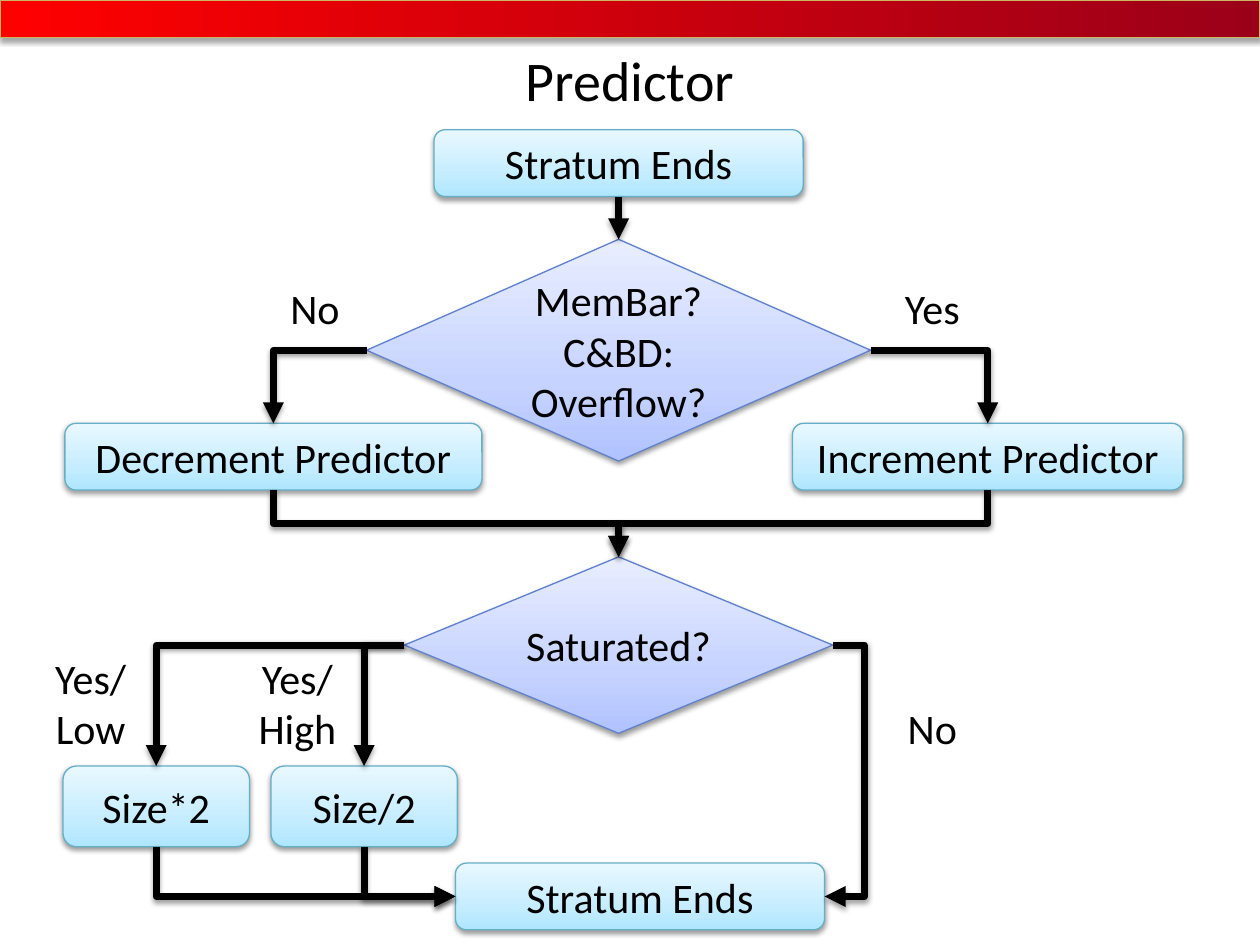
from copy import deepcopy

from lxml.etree import SubElement as Sub
from pptx import Presentation
from pptx.dml.color import RGBColor
from pptx.enum.shapes import MSO_CONNECTOR as Link, MSO_SHAPE as Kind
from pptx.enum.text import MSO_ANCHOR as Anchor, PP_ALIGN as Align
from pptx.oxml.ns import qn
from pptx.util import Inches, Pt

BLACK = RGBColor(0, 0, 0)
RED = RGBColor(0xFF, 0x00, 0x00)
WINE = RGBColor(0x9B, 0x00, 0x19)
GOLD = RGBColor(0xCC, 0xB6, 0x61)
AQUA = [RGBColor(0xAE, 0xE6, 0xFF), RGBColor(0xC6, 0xED, 0xFF), RGBColor(0xE9, 0xF8, 0xFF)]
TEAL = RGBColor(0x66, 0xAE, 0xC7)
LILAC = [RGBColor(0xB0, 0xC2, 0xFF), RGBColor(0xC6, 0xD3, 0xFF), RGBColor(0xE9, 0xEE, 0xFF)]
BLUE = RGBColor(0x60, 0x81, 0xCD)
WIDE, HIGH = Inches(10), Inches(7.5)
COLS, ROWS = 100, 75
TOP, LEFT, BASE, RIGHT = range(4)
STEP = Kind.FLOWCHART_ALTERNATE_PROCESS
TEST = Kind.FLOWCHART_DECISION
AXIS = 49.1


def cell(left, top, wide, high):
    col, row = WIDE / COLS, HIGH / ROWS
    return round(left * col), round(top * row), round(wide * col), round(high * row)


def write(frame, text, size=24):
    frame.word_wrap = True
    frame.text = text
    for para in frame.paragraphs:
        para.alignment = Align.CENTER
        for run in para.runs:
            run.font.size = Pt(size)
            run.font.name = "Calibri"
            run.font.color.rgb = BLACK


def shade(item, alpha=38, gap=1.6):
    props = item._element.spPr
    for old in props.findall(qn("a:effectLst")):
        props.remove(old)
    drop = Sub(Sub(props, qn("a:effectLst")), qn("a:outerShdw"), blurRad=str(Pt(3.1)),
               dist=str(Pt(gap)), dir="5400000", rotWithShape="0")
    tone = Sub(drop, qn("a:srgbClr"), val=str(BLACK))
    Sub(tone, qn("a:alpha"), val=str(alpha * 1000))


def blend(shape, tones, angle, edge):
    shape.fill.gradient()
    shape.fill.gradient_angle = angle
    if len(tones) == 3:
        first = shape.fill.gradient_stops[0]._gs
        first.addnext(deepcopy(first))
    spots = [0, 0.35, 1] if len(tones) == 3 else [0, 1]
    for stop, tone, spot in zip(shape.fill.gradient_stops, tones, spots):
        stop.color.rgb = tone
        stop.position = spot
    shape.line.color.rgb = edge
    shape.line.width = Pt(0.75)


def add_bar(shapes):
    bar = shapes.add_shape(Kind.RECTANGLE, *cell(0, 0, COLS, 3))
    blend(bar, [RED, WINE], 0, GOLD)
    shade(bar, 35, 1.8)


def add_title(slide, text):
    title = slide.shapes.title
    title.left, title.top, title.width, title.height = cell(5, 3, 90, 6.6)
    title.text_frame.vertical_anchor = Anchor.MIDDLE
    write(title.text_frame, text, 32)


def add_node(shapes, kind, text, mid, top, wide, high):
    node = shapes.add_shape(kind, *cell(mid - wide / 2, top, wide, high))
    blend(node, *((AQUA, 90, TEAL) if kind == STEP else (LILAC, 90, BLUE)))
    shade(node)
    write(node.text_frame, text)
    node.text_frame.vertical_anchor = Anchor.MIDDLE
    return node


def add_label(shapes, text, left, top, high=5):
    box = shapes.add_textbox(*cell(left, top, 10.4, high))
    write(box.text_frame, text)


def join(shapes, start, side, end, goal, kind=Link.STRAIGHT):
    line = shapes.add_connector(kind, 0, 0, 0, 0)
    line.begin_connect(start, side)
    line.end_connect(end, goal)
    line.line.color.rgb = BLACK
    line.line.width = Pt(4)
    Sub(line.line._get_or_add_ln(), qn("a:tailEnd"), type="triangle")
    shade(line)
    return line


def turn(line, rot, flip):
    form = line._element.spPr.xfrm
    for name in ("flipH", "flipV"):
        form.attrib.pop(name, None)
    form.set("rot", str(rot * 60000))
    if flip:
        form.set(flip, "1")


def bend(shapes, start, side, end, goal, corners, reach=None):
    line = join(shapes, start, side, end, goal, Link.ELBOW)
    geom = line._element.spPr.find(qn("a:prstGeom"))
    geom.set("prst", f"bentConnector{corners + 1}")
    across = line.end_x - line.begin_x
    if side == BASE:
        wide, high = line.width, line.height
        left, top = line.left + (wide - high) // 2, line.top + (high - wide) // 2
        turn(line, *((270, "flipH") if across > 0 else (90, None)))
        line.left, line.top, line.width, line.height = left, top, high, wide
    elif across < 0 and corners == 1:
        turn(line, 180, "flipV")
    if reach:
        share = round(-reach / line.width * 100000)
        Sub(geom.get_or_add_avLst(), qn("a:gd"), name="adj1", fmla=f"val {share}")


def main():
    deck = Presentation()
    deck.slide_width, deck.slide_height = WIDE, HIGH
    slide = deck.slides.add_slide(deck.slide_layouts[5])
    shapes = slide.shapes
    add_bar(shapes)
    add_title(slide, "Predictor")

    check = add_node(shapes, TEST, "MemBar?\nC&BD: Overflow?", AXIS, 19, 40, 17.6)
    begin = add_node(shapes, STEP, "Stratum Ends", AXIS, 10.3, 29.3, 5.3)
    full = add_node(shapes, TEST, "Saturated?", AXIS, 44.2, 34, 14)
    down = add_node(shapes, STEP, "Decrement Predictor", 21.7, 33.6, 33.1, 5.3)
    rise = add_node(shapes, STEP, "Increment Predictor", 78.4, 33.6, 31, 5.3)
    grow = add_node(shapes, STEP, "Size*2", 12.4, 60.8, 14.8, 6.4)
    halve = add_node(shapes, STEP, "Size/2", 28.9, 60.8, 14.8, 6.4)
    close = add_node(shapes, STEP, "Stratum Ends", 50.8, 68.5, 29.3, 5.3)

    join(shapes, begin, BASE, check, TOP)
    for side, node in ((LEFT, down), (RIGHT, rise)):
        bend(shapes, check, side, node, TOP, 1)
        bend(shapes, node, BASE, full, TOP, 2)
    for node in (grow, halve):
        bend(shapes, full, LEFT, node, TOP, 1)
        bend(shapes, node, BASE, close, LEFT, 1)
    bend(shapes, full, RIGHT, close, RIGHT, 2, Inches(0.25))

    add_label(shapes, "No", 19.8, 21.9)
    add_label(shapes, "Yes", 68.8, 21.9)
    add_label(shapes, "Yes/Low", 2, 51.3, 9.1)
    add_label(shapes, "Yes/High", 18.4, 51.3, 9.1)
    add_label(shapes, "No", 68.8, 55.3)
    deck.save("out.pptx")


if __name__ == "__main__":
    main()
